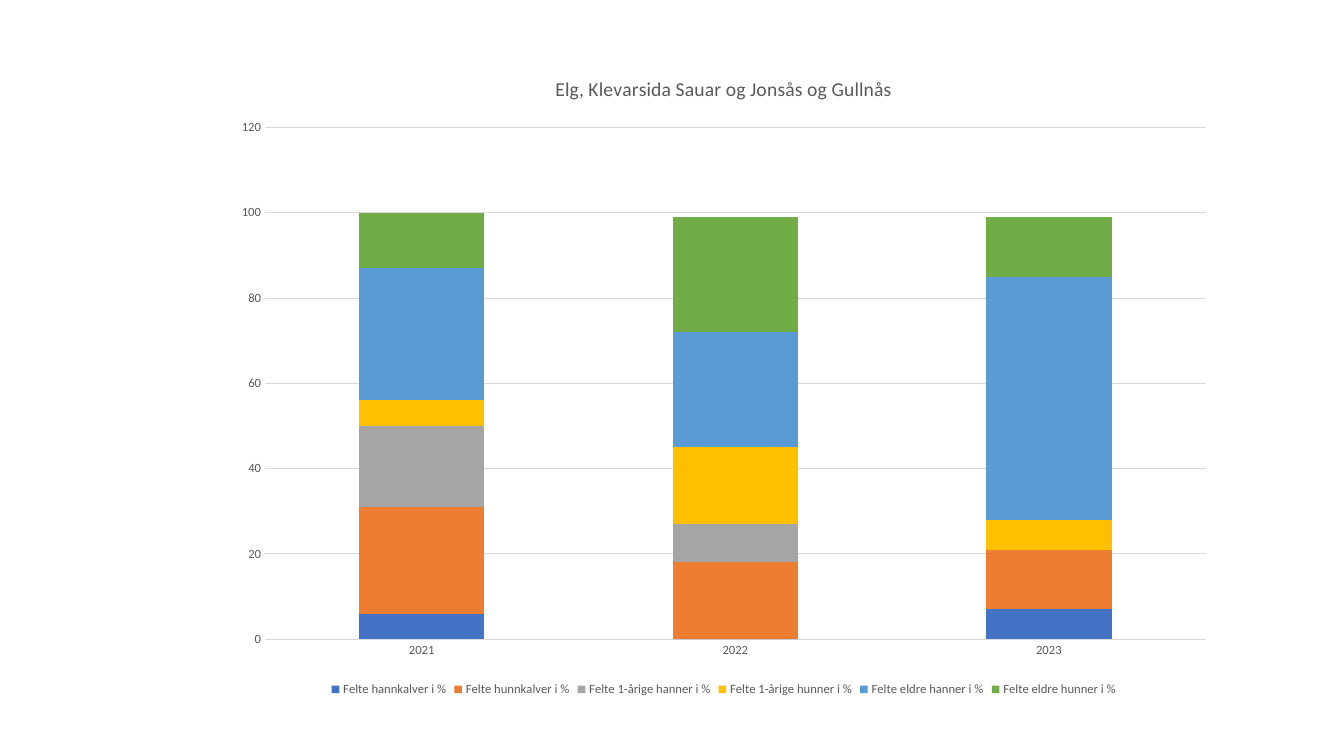
"""Build a slide with a stacked column chart of moose harvest shares by year."""
from dataclasses import dataclass

import pptx
import pptx.chart.data
import pptx.dml.color
import pptx.enum.chart
import pptx.util


@dataclass(frozen=True)
class Theme:
    """Colours, font and type sizes of the slide."""
    font: str = "Calibri"
    text: str = "595959"
    line: str = "D9D9D9"
    title_size: float = 14
    label_size: float = 9
    line_width: float = 0.75


THEME = Theme()
SLIDE_WIDTH = pptx.util.Inches(13.33)
SLIDE_HEIGHT = pptx.util.Inches(7.5)
CHART_SHARES = {"left": 0.165, "top": 0.07, "width": 0.747, "height": 0.857}
TITLE = "Elg, Klevarsida Sauar og Jonsås og Gullnås"
YEARS = ("2021", "2022", "2023")
HARVEST = (
    ("Felte hannkalver i %", (6, 0, 7), "4472C4"),
    ("Felte hunnkalver i %", (25, 18, 14), "ED7D31"),
    ("Felte 1-årige hanner i %", (19, 9, 0), "A5A5A5"),
    ("Felte 1-årige hunner i %", (6, 18, 7), "FFC000"),
    ("Felte eldre hanner i %", (31, 27, 57), "5B9BD5"),
    ("Felte eldre hunner i %", (13, 27, 14), "70AD47"),
)


def set_attributes(target, values):
    """Set each named attribute of the target."""
    for name, value in values.items():
        setattr(target, name, value)


def color(value):
    """Return a colour from its hexadecimal text."""
    return pptx.dml.color.RGBColor.from_string(value)


def format_font(font, size):
    """Apply the theme's typeface and text colour at a size."""
    set_attributes(font, {"name": THEME.font, "size": pptx.util.Pt(size), "bold": False})
    font.color.rgb = color(THEME.text)


def format_line(line):
    """Apply the theme's thin grey line."""
    line.color.rgb = color(THEME.line)
    line.width = pptx.util.Pt(THEME.line_width)


def add_harvest_chart(slide):
    """Add the stacked column chart and colour its series."""
    data = pptx.chart.data.CategoryChartData()
    data.categories = YEARS
    for name, values, _ in HARVEST:
        data.add_series(name, values)
    chart = slide.shapes.add_chart(
        pptx.enum.chart.XL_CHART_TYPE.COLUMN_STACKED,
        int(SLIDE_WIDTH * CHART_SHARES["left"]),
        int(SLIDE_HEIGHT * CHART_SHARES["top"]),
        int(SLIDE_WIDTH * CHART_SHARES["width"]),
        int(SLIDE_HEIGHT * CHART_SHARES["height"]),
        data,
    ).chart
    format_font(chart.font, THEME.label_size)
    plot = chart.plots[0]
    set_attributes(plot, {"gap_width": 150, "overlap": 100, "vary_by_categories": False})
    for series, (_, _, fill) in zip(plot.series, HARVEST):
        series.format.fill.solid()
        series.format.fill.fore_color.rgb = color(fill)
        series.invert_if_negative = False
    return chart


def format_title(chart):
    """Write the chart title."""
    chart.has_title = True
    chart.chart_title.include_in_layout = False
    paragraph = chart.chart_title.text_frame.paragraphs[0]
    run = paragraph.add_run()
    run.text = TITLE
    format_font(run.font, THEME.title_size)


def format_axes(chart):
    """Style both axes and the gridlines."""
    for axis in (chart.category_axis, chart.value_axis):
        set_attributes(axis, {
            "major_tick_mark": pptx.enum.chart.XL_TICK_MARK.NONE,
            "minor_tick_mark": pptx.enum.chart.XL_TICK_MARK.NONE,
        })
        format_font(axis.tick_labels.font, THEME.label_size)
    format_line(chart.category_axis.format.line)
    set_attributes(chart.value_axis, {
        "minimum_scale": 0, "maximum_scale": 120, "major_unit": 20,
        "has_major_gridlines": True,
    })
    chart.value_axis.format.line.fill.background()
    format_line(chart.value_axis.major_gridlines.format.line)


def format_legend(chart):
    """Place the legend below the plot."""
    chart.has_legend = True
    set_attributes(chart.legend, {
        "position": pptx.enum.chart.XL_LEGEND_POSITION.BOTTOM,
        "include_in_layout": False,
    })
    format_font(chart.legend.font, THEME.label_size)


def main():
    """Build and save the presentation."""
    presentation = pptx.Presentation()
    set_attributes(presentation, {"slide_width": SLIDE_WIDTH, "slide_height": SLIDE_HEIGHT})
    slide = presentation.slides.add_slide(presentation.slide_layouts[6])
    chart = add_harvest_chart(slide)
    format_title(chart)
    format_axes(chart)
    format_legend(chart)
    presentation.save("out.pptx")


if __name__ == "__main__":
    main()
